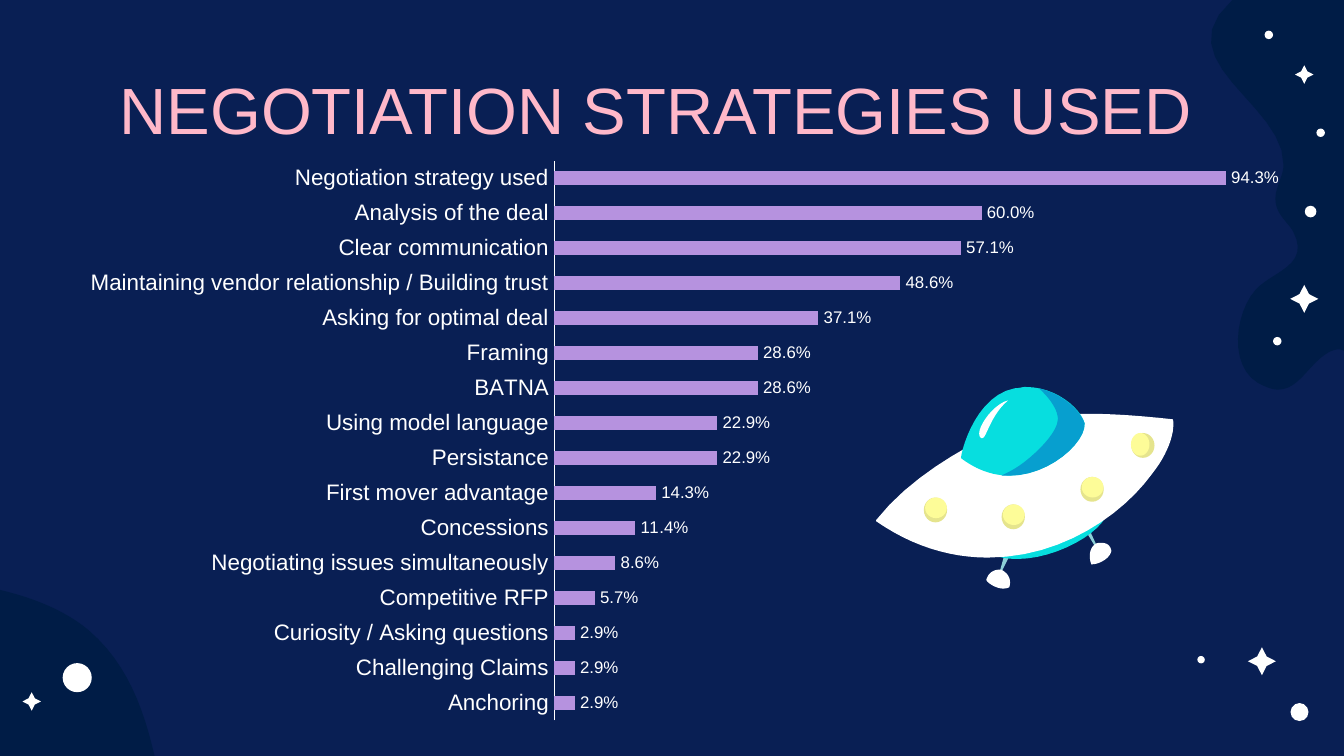
"""Build a slide charting the negotiation strategies used, on a space backdrop."""
import pptx
import pptx.chart.data
import pptx.dml.color
import pptx.enum.chart
import pptx.enum.shapes
import pptx.enum.text
import pptx.util
from lxml import etree

Cm = pptx.util.Cm
Pt = pptx.util.Pt
rgb = pptx.dml.color.RGBColor.from_string
FONT = "Arial"
COLORS = {
    "night": "091F54", "cloud": "001C46", "white": "FFFFFF", "pink": "FFB8C9", "bar": "B692DF",
    "leg": "8CCFD6", "cyan": "07DEDF", "blue": "079FCF", "light": "FDFC98", "shade": "E5E48D",
}


def write_text(shape, text, *, size, color, font=FONT, align=pptx.enum.text.PP_ALIGN.LEFT):
    frame = shape.text_frame
    frame.word_wrap = True
    frame.vertical_anchor = pptx.enum.text.MSO_ANCHOR.MIDDLE
    paragraph = frame.paragraphs[0]
    paragraph.alignment = align
    run = paragraph.add_run()
    run.text = text
    run.font.name = font
    run.font.size = Pt(size)
    run.font.color.rgb = rgb(COLORS[color])


def draw_outline(shapes, color, start, *segments):
    """Take hundredths of an inch; pairs are lines and sextuples are Bezier curves."""
    points = [start]
    for segment in segments:
        if len(segment) == 2:
            points.append(segment)
            continue
        controls = [points[-1], segment[:2], segment[2:4], segment[4:]]
        for step in range(1, 13):
            t = step / 12
            weights = ((1 - t) ** 3, 3 * t * (1 - t) ** 2, 3 * t * t * (1 - t), t ** 3)
            points.append(tuple(sum(w * c[axis] for w, c in zip(weights, controls)) for axis in (0, 1)))
    scale = 100
    builder = shapes.build_freeform(
        round(points[0][0] * scale), round(points[0][1] * scale), scale=Cm(2.54) / 100 / scale)
    builder.add_line_segments([(round(x * scale), round(y * scale)) for x, y in points[1:]], close=True)
    shape = builder.convert_to_shape()
    shape.fill.solid()
    shape.fill.fore_color.rgb = rgb(COLORS[color])
    shape.line.fill.background()
    shape.shadow.inherit = False


presentation = pptx.Presentation()
presentation.slide_width = Cm(25.4)
presentation.slide_height = Cm(14.29)
slide = presentation.slides.add_slide(presentation.slide_layouts[6])
slide.background.fill.solid()
slide.background.fill.fore_color.rgb = rgb(COLORS["night"])

draw_outline(
    slide.shapes, "cloud", (917, 0), (865, 46, 956, 77, 955, 123), (955, 131, 949, 139, 949, 148),
    (949, 159, 957, 164, 962, 172), (976, 198, 946, 202, 934, 216), (919, 233, 914, 272, 936, 285),
    (942, 288, 946, 290, 951, 290), (967, 290, 974, 270, 989, 262), (991, 261, 994, 260, 996, 260),
    (998, 260, 999, 261, 1000, 261), (1000, 0))
draw_outline(
    slide.shapes, "cloud", (0, 439), (0, 562.5), (115, 562.5), (107, 528, 95, 494, 66, 469),
    (48, 454, 25, 445, 0, 439))

title = slide.shapes.add_textbox(Cm(2.01), Cm(1.24), Cm(21.41), Cm(1.6))
title.text_frame.margin_left = title.text_frame.margin_right = Cm(0.25)
title.text_frame.margin_top = title.text_frame.margin_bottom = Cm(0.25)
write_text(title, "NEGOTIATION STRATEGIES USED", size=35, color="pink")

saucer = slide.shapes.add_group_shape().shapes
saucer_outlines = [
    ("leg", (811, 395), (809, 397), (815, 407), (816, 406)),
    ("white", (819, 404), (818, 404, 816, 404, 815, 405), (813, 406, 809, 411, 812, 420),
     (813, 420), (817, 420, 826, 416, 827, 410), (826, 405, 823, 404, 819, 404)),
    ("leg", (747, 414), (744, 425), (745, 426), (751, 414)),
    ("white", (743, 424), (741, 424, 736, 425, 734, 431), (733, 433, 741, 438, 746, 438),
     (748, 438, 749, 438, 751, 437), (753, 430, 749, 426, 745, 424)),
    ("cyan", (801, 375), (775, 375, 736, 384, 727, 405), (734, 413, 745, 416, 757, 416),
     (786, 416, 821, 396, 824, 381), (823, 377, 813, 375, 801, 375)),
    ("white", (810, 308), (787, 308, 770, 310, 759, 314), (758, 315, 689, 340, 652, 387), (652, 388),
     (678, 406, 706, 415, 735, 415), (791, 415, 836, 382, 857, 353), (869, 338, 874, 323, 873, 313),
     (873, 312, 872, 312, 872, 312), (862, 311, 836, 308, 810, 308)),
    ("cyan", (763, 288), (761, 288, 758, 289, 755, 289), (728, 294, 716, 331, 715, 341),
     (727, 350, 739, 354, 751, 354), (781, 354, 808, 329, 807, 315), (804, 304, 786, 288, 763, 288)),
    ("white", (750, 298), (738, 301, 724, 322, 730, 326), (731, 326), (734, 326, 737, 309, 750, 298)),
    ("blue", (773, 289), (781, 296, 788, 306, 787, 313), (786, 324, 765, 344, 751, 351),
     (749, 352, 747, 353, 745, 354), (747, 354, 749, 354, 751, 354), (781, 354, 808, 329, 807, 315),
     (804, 306, 791, 293, 773, 289)),
]
for color, *outline in saucer_outlines:
    draw_outline(saucer, color, *outline)

OVAL = pptx.enum.shapes.MSO_SHAPE.OVAL
STAR = pptx.enum.shapes.MSO_SHAPE.STAR_4_POINT
dots = [(24.14, 6.45, 0.16), (24.77, 4, 0.22), (1.46, 12.81, 0.55), (23.98, 0.66, 0.16),
        (24.96, 2.51, 0.16), (22.7, 12.47, 0.14), (24.56, 13.46, 0.34)]
stars = [(24.65, 5.65, 0.53), (24.65, 1.41, 0.35), (0.6, 13.26, 0.35), (23.85, 12.5, 0.53)]
lights = [(20.64, 9.25, 0.01, -0.04, 0.41, 0.39), (19.15, 9.77, 0.01, -0.04, 0.41, 0.39),
          (17.68, 9.64, 0.01, -0.04, 0.41, 0.39), (21.6, 8.42, -0.05, -0.02, 0.35, 0.43)]
marks = [(slide.shapes, OVAL, "white", x, y, size, size) for x, y, size in dots]
marks += [(slide.shapes, STAR, "white", x, y, size, size) for x, y, size in stars]
for x, y, shift_x, shift_y, width, height in lights:
    marks.append((saucer, OVAL, "shade", x, y, 0.44, 0.47))
    marks.append((saucer, OVAL, "light", x + shift_x, y + shift_y, width, height))
for shapes, kind, color, x, y, width, height in marks:
    shape = shapes.add_shape(kind, Cm(x - width / 2), Cm(y - height / 2), Cm(width), Cm(height))
    if kind == STAR:
        shape.adjustments[0] = 0.24
    shape.fill.solid()
    shape.fill.fore_color.rgb = rgb(COLORS[color])
    shape.line.fill.background()
    shape.shadow.inherit = False

strategies = [
    ("Anchoring", 0.029), ("Challenging Claims", 0.029), ("Curiosity / Asking questions", 0.029),
    ("Competitive RFP", 0.057), ("Negotiating issues simultaneously", 0.086), ("Concessions", 0.114),
    ("First mover advantage", 0.143), ("Persistance", 0.229), ("Using model language", 0.229),
    ("BATNA", 0.286), ("Framing", 0.286), ("Asking for optimal deal", 0.371),
    ("Maintaining vendor relationship / Building trust", 0.486), ("Clear communication", 0.571),
    ("Analysis of the deal", 0.6), ("Negotiation strategy used", 0.943),
]
chart_data = pptx.chart.data.CategoryChartData(number_format="0.0%")
chart_data.categories = [name for name, share in strategies]
chart_data.add_series("Series 1", [share for name, share in strategies])
chart = slide.shapes.add_chart(
    pptx.enum.chart.XL_CHART_TYPE.BAR_CLUSTERED, Cm(0.79), Cm(2.82), Cm(23.62), Cm(11.02), chart_data).chart
chart.has_legend = False
chart.has_title = False

category_axis = chart.category_axis
category_axis.major_tick_mark = pptx.enum.chart.XL_TICK_MARK.NONE
category_axis.has_major_gridlines = False
category_axis.format.line.color.rgb = rgb(COLORS["white"])
category_axis.format.line.width = Pt(0.75)
value_axis = chart.value_axis
value_axis.visible = False
value_axis.has_major_gridlines = False
value_axis.minimum_scale = 0
value_axis.maximum_scale = 1

plot = chart.plots[0]
plot.gap_width = 150
plot.overlap = -25
plot.vary_by_categories = False
plot.series[0].format.fill.solid()
plot.series[0].format.fill.fore_color.rgb = rgb(COLORS["bar"])
plot.has_data_labels = True
labels = plot.data_labels
labels.show_value = True
labels.number_format = "0.0%"
labels.number_format_is_linked = False
labels.position = pptx.enum.chart.XL_LABEL_POSITION.OUTSIDE_END
for font, size in ((chart.font, 10), (category_axis.tick_labels.font, 12), (labels.font, 9)):
    font.name = FONT
    font.size = Pt(size)
    font.color.rgb = rgb(COLORS["white"])

plot_area = chart.element.find(".//{*}plotArea")
for old_layout in plot_area.findall("{*}layout"):
    plot_area.remove(old_layout)
namespace = "{http://schemas.openxmlformats.org/drawingml/2006/chart}"
layout = etree.Element(namespace + "layout")
manual_layout = etree.SubElement(layout, namespace + "manualLayout")
for tag, value in (("layoutTarget", "inner"), ("xMode", "edge"), ("yMode", "edge"),
                   ("x", 0.41), ("y", 0.02), ("w", 0.57), ("h", 0.96)):
    etree.SubElement(manual_layout, namespace + tag, val=str(value))
plot_area.insert(0, layout)

presentation.save("out.pptx")
